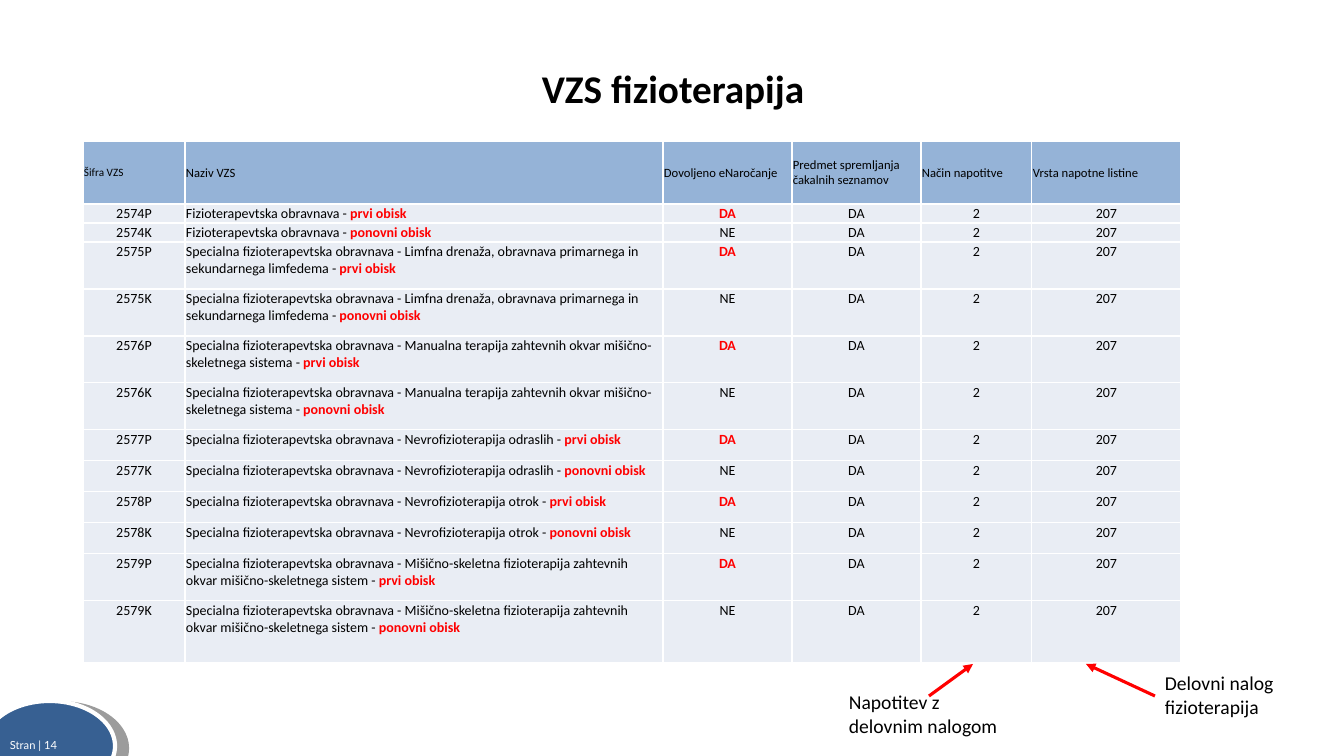
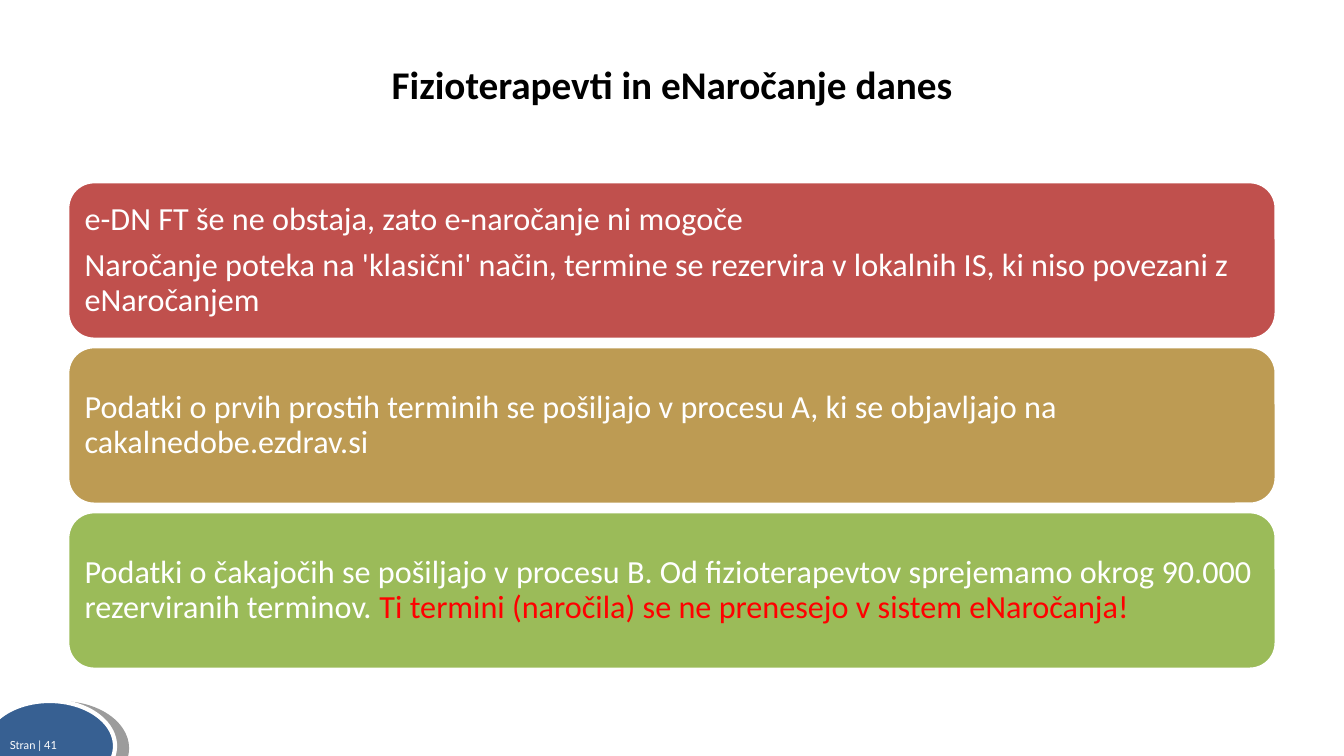
from lxml.etree import SubElement
from pptx import Presentation
from pptx.dml.color import RGBColor
from pptx.enum.shapes import MSO_CONNECTOR, MSO_SHAPE
from pptx.enum.text import MSO_ANCHOR, PP_ALIGN
from pptx.oxml.ns import qn
from pptx.util import Pt

PX = 9071  # EMU per px, on a slide of 1344 x 756 px
BLACK, WHITE, RED = "000000", "FFFFFF", "FF0000"
NAVY, HEADER_BLUE, ROW_GREY = "376092", "95B3D7", "E9EDF4"
rgb = RGBColor.from_string


def write(frame, *paragraphs, size, color=BLACK, bold=False, font="Calibri",
          align=PP_ALIGN.LEFT, spacing=None, gap=0):
    """Each paragraph is a string or a list of strings and (text, color, bold) runs."""
    frame.word_wrap = True
    for i, runs in enumerate(paragraphs):
        paragraph = frame.paragraphs[0] if i == 0 else frame.add_paragraph()
        paragraph.alignment = align
        if spacing:
            paragraph.line_spacing = spacing
        if i and gap:
            paragraph.space_before = Pt(gap)
        for part in [runs] if isinstance(runs, str) else runs:
            text, run_color, run_bold = (part, color, bold) if isinstance(part, str) else part
            run = paragraph.add_run()
            run.text = text
            run.font.name, run.font.size, run.font.bold = font, Pt(size), run_bold
            run.font.color.rgb = rgb(run_color)


def style(shape, fill, line_width):
    shape.shadow.inherit = False
    shape.fill.solid()
    shape.fill.fore_color.rgb = rgb(fill)
    shape.line.color.rgb = rgb(WHITE)
    shape.line.width = Pt(line_width)


deck = Presentation()
deck.slide_width, deck.slide_height = 1344 * PX, 756 * PX

# Shared parts: page badge, page number, title
slides = []
for page, title, left, top in [(14, "VZS fizioterapija", 69, 57),
                               (41, "Fizioterapevti in eNaročanje danes", 68, 53)]:
    slide = deck.slides.add_slide(deck.slide_layouts[6])
    slides.append(slide)
    badge = slide.shapes.add_shape(MSO_SHAPE.OVAL, -16 * PX, 701 * PX, 131 * PX, 90 * PX)
    style(badge, NAVY, 3)
    effects = badge.element.spPr.find(qn("a:effectLst"))
    shadow = SubElement(effects, qn("a:outerShdw"), blurRad="0", dist=str(Pt(8.7)),
                        dir=str(11 * 60000), algn="ctr", rotWithShape="0")
    shadow_color = SubElement(shadow, qn("a:srgbClr"), val=BLACK)
    SubElement(shadow_color, qn("a:alpha"), val="38000")

    page_number = slide.shapes.add_textbox(0, 733 * PX, 75 * PX, 24 * PX)
    write(page_number.text_frame, f"Stran | {page}", size=8, color=WHITE, font="Lato")
    heading = slide.shapes.add_textbox(left * PX, top * PX, 1208 * PX, 113 * PX)
    write(heading.text_frame, title, size=28, bold=True, align=PP_ALIGN.CENTER, spacing=1.06)

services_slide, today_slide = slides

# Slide 1: callouts with arrows to the table
for text, left, top, start, end in [
        ("Napotitev z delovnim nalogom", 839, 685, 929, 973),
        ("Delovni nalog fizioterapija", 1155, 666, 1155, 1086)]:
    arrow = services_slide.shapes.add_connector(
        MSO_CONNECTOR.STRAIGHT, start * PX, 696 * PX, end * PX, 664 * PX)
    arrow.line.color.rgb = rgb(RED)
    arrow.line.width = Pt(2.25)
    arrow_properties = arrow.element.spPr
    SubElement(arrow_properties.find(qn("a:ln")), qn("a:tailEnd"), type="triangle")
    SubElement(arrow_properties, qn("a:effectLst"))
    callout = services_slide.shapes.add_textbox(left * PX, top * PX, 182 * PX, 57 * PX)
    write(callout.text_frame, text, size=14)

# Slide 1: table of services, a first and a repeat visit for each treatment
special = "Specialna fizioterapevtska obravnava - "
treatments = [
    "Fizioterapevtska obravnava - ",
    special + "Limfna drenaža, obravnava primarnega in sekundarnega limfedema - ",
    special + "Manualna terapija zahtevnih okvar mišično-skeletnega sistema - ",
    special + "Nevrofizioterapija odraslih - ",
    special + "Nevrofizioterapija otrok - ",
    special + "Mišično-skeletna fizioterapija zahtevnih okvar mišično-skeletnega sistem - ",
]
rows = [["Šifra VZS", "Naziv VZS", "Dovoljeno eNaročanje",
         "Predmet spremljanja čakalnih seznamov", "Način napotitve", "Vrsta napotne listine"]]
for code, treatment in enumerate(treatments, 2574):
    for suffix, visit, booking in [("P", "prvi obisk", ("DA", RED, True)),
                                   ("K", "ponovni obisk", "NE")]:
        rows.append([f"{code}{suffix}", [treatment, (visit, RED, True)], [booking],
                     "DA", "2", "207"])
column_widths = [102, 478, 129, 129, 111, 149]
row_heights = [63, 19, 19, 47, 47, 47, 47, 31, 31, 31, 31, 47, 62]

services = services_slide.shapes.add_table(
    len(rows), len(column_widths), 83 * PX, 141 * PX,
    sum(column_widths) * PX, sum(row_heights) * PX).table
services.first_row = services.horz_banding = False
for column, width in zip(services.columns, column_widths):
    column.width = width * PX
for r, (row, height) in enumerate(zip(rows, row_heights)):
    services.rows[r].height = height * PX
    for c, content in enumerate(row):
        cell = services.cell(r, c)
        cell.margin_left = cell.margin_right = cell.margin_top = PX
        cell.margin_bottom = 0
        cell.vertical_anchor = MSO_ANCHOR.TOP if r else MSO_ANCHOR.MIDDLE
        for side in ("lnL", "lnR", "lnT", "lnB"):
            border = SubElement(cell._tc.get_or_add_tcPr(), qn(f"a:{side}"), w=str(Pt(1)))
            SubElement(SubElement(border, qn("a:solidFill")), qn("a:srgbClr"), val=WHITE)
        cell.fill.solid()
        cell.fill.fore_color.rgb = rgb(ROW_GREY if r else HEADER_BLUE)
        write(cell.text_frame, content, size=10 if r else 9 if c else 8,
              align=PP_ALIGN.CENTER if r and c != 1 else PP_ALIGN.LEFT)

# Slide 2: three stacked statements
statements = [
    ("C0504D", ["e-DN FT še ne obstaja, zato e-naročanje ni mogoče",
                "Naročanje poteka na 'klasični' način, termine se rezervira v lokalnih IS, "
                "ki niso povezani z eNaročanjem"]),
    ("BD9B53", ["Podatki o prvih prostih terminih se pošiljajo v procesu A, "
                "ki se objavljajo na cakalnedobe.ezdrav.si"]),
    ("9BBB59", [["Podatki o čakajočih se pošiljajo v procesu B. Od fizioterapevtov "
                 "sprejemamo okrog 90.000 rezerviranih terminov. ",
                 ("Ti termini (naročila) se ne prenesejo v sistem eNaročanja!", RED, False)]]),
]
for i, (color, paragraphs) in enumerate(statements):
    statement = today_slide.shapes.add_shape(
        MSO_SHAPE.ROUNDED_RECTANGLE, 68 * PX, (182 + 165 * i) * PX, 1208 * PX, 157 * PX)
    style(statement, color, 2)
    frame = statement.text_frame
    frame.margin_left = frame.margin_right = frame.margin_top = frame.margin_bottom = 9 * PX
    frame.vertical_anchor = MSO_ANCHOR.MIDDLE
    write(frame, *paragraphs, size=23, color=WHITE, spacing=0.9, gap=8)

deck.save("out.pptx")
